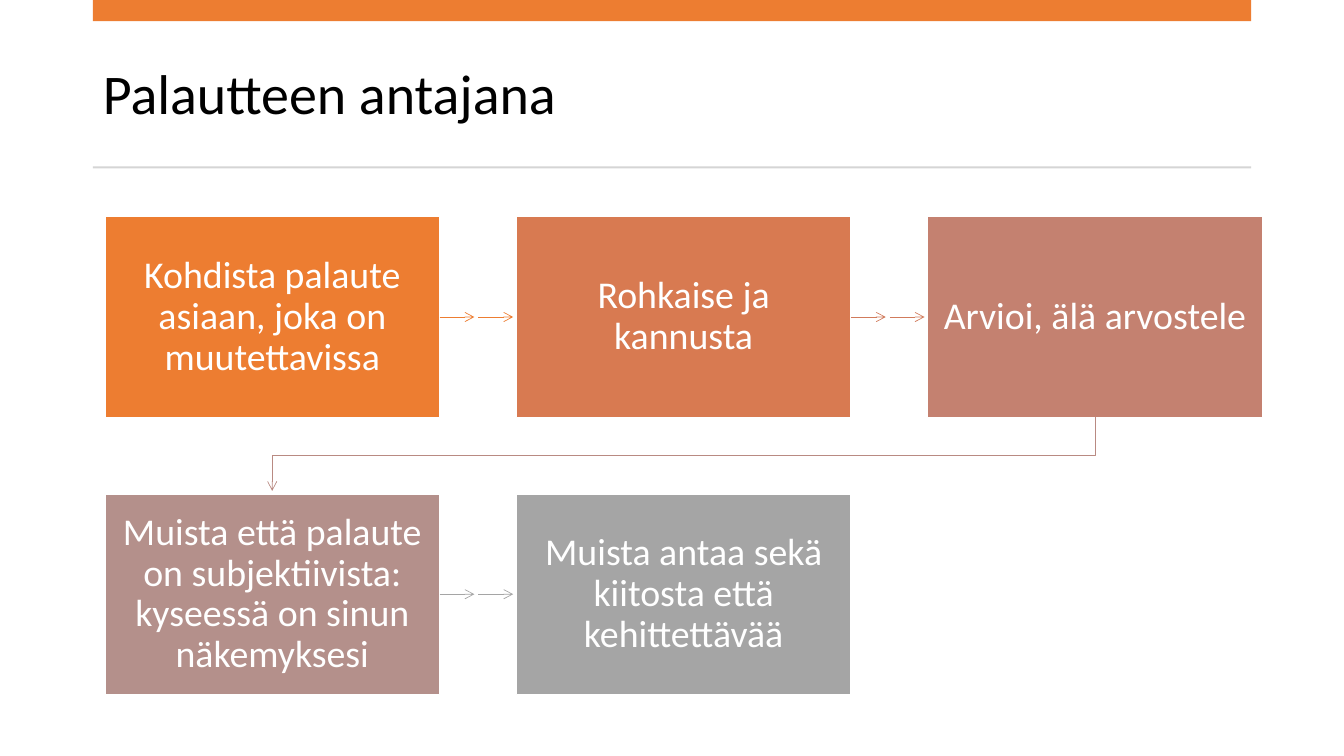
from dataclasses import dataclass

from lxml import etree
from pptx import Presentation
from pptx import util as u
from pptx.dml.color import RGBColor
from pptx.enum import shapes, text
from pptx.oxml import ns

COLORS = {
    "accent": "ED7D31", "rule": "D5D5D5", "white": "FFFFFF", "black": "000000",
    "focus": "ED7D31", "encourage": "D87A51", "assess": "C48170",
    "subjective": "B4908B", "balance": "A5A5A5",
    "encourage_arrow": "D17B5C", "row_arrow": "B98A82",
}
FONT = "Calibri"
GRID_LEFT, GRID_TOP = 1.04, 2.15
COLUMN, ROW = 4.08, 2.75
STEP_WIDTH, STEP_HEIGHT = 3.32, 1.99
BAND_LEFT, BAND_WIDTH = 0.92, 11.49
DASH, DASH_GAP = 0.345, 0.04
ARROW_END_GAP = 0.03


@dataclass(frozen=True)
class Step:
    wording: str
    column: int
    row: int
    color: str

    @property
    def left(self) -> float:
        return GRID_LEFT + self.column * COLUMN

    @property
    def top(self) -> float:
        return GRID_TOP + self.row * ROW

    @property
    def center(self) -> float:
        return self.left + STEP_WIDTH / 2


@dataclass(frozen=True)
class Link:
    source: int
    target: int
    color: str


STEPS = [
    Step("Kohdista palaute asiaan, joka on muutettavissa", 0, 0, "focus"),
    Step("Rohkaise ja kannusta", 1, 0, "encourage"),
    Step("Arvioi, älä arvostele", 2, 0, "assess"),
    Step("Muista että palaute on subjektiivista: kyseessä on sinun näkemyksesi", 0, 1, "subjective"),
    Step("Muista antaa sekä kiitosta että kehittettävää", 1, 1, "balance"),
]
LINKS = [
    Link(0, 1, "accent"),
    Link(1, 2, "encourage_arrow"),
    Link(2, 3, "row_arrow"),
    Link(3, 4, "balance"),
]


def rgb(name: str) -> RGBColor:
    return RGBColor.from_string(COLORS[name])


def write(frame, wording: str, size: float, color: str, align) -> None:
    frame.text = wording
    frame.word_wrap = True
    frame.auto_size = text.MSO_AUTO_SIZE.NONE
    frame.vertical_anchor = text.MSO_ANCHOR.MIDDLE
    paragraph = frame.paragraphs[0]
    paragraph.alignment = align
    paragraph.line_spacing = 0.9
    paragraph.font.name = FONT
    paragraph.font.size = u.Pt(size)
    paragraph.font.color.rgb = rgb(color)


def draw_rect(slide, left: float, top: float, width: float, height: float, color: str):
    rect = slide.shapes.add_shape(
        shapes.MSO_SHAPE.RECTANGLE,
        u.Inches(left), u.Inches(top), u.Inches(width), u.Inches(height))
    rect.shadow.inherit = False
    rect.fill.solid()
    rect.fill.fore_color.rgb = rgb(color)
    rect.line.fill.background()
    return rect


def draw_step(slide, step: Step):
    box = draw_rect(slide, step.left, step.top, STEP_WIDTH, STEP_HEIGHT, step.color)
    box.line.color.rgb = rgb("white")
    box.line.width = u.Pt(1)
    frame = box.text_frame
    frame.margin_left = frame.margin_right = u.Inches(0.16)
    frame.margin_top = frame.margin_bottom = u.Inches(0.17)
    write(frame, step.wording, 27, "white", text.PP_ALIGN.CENTER)
    return box


def style_arrow(arrow, color: str) -> None:
    arrow.line.color.rgb = rgb(color)
    arrow.line.width = u.Pt(0.5)
    etree.SubElement(arrow.get_or_add_ln(), ns.qn("a:tailEnd"), type="arrow")


def draw_dash(slide, start: float, end: float, y: float, color: str):
    dash = slide.shapes.add_connector(
        shapes.MSO_CONNECTOR.STRAIGHT,
        u.Inches(start), u.Inches(y), u.Inches(end), u.Inches(y))
    style_arrow(dash, color)
    etree.SubElement(dash.element.spPr, ns.qn("a:effectLst"))
    return dash


def draw_row_link(slide, source: Step, target: Step, source_box, color: str) -> None:
    y = source.top + STEP_HEIGHT / 2
    start = source.left + STEP_WIDTH
    end = target.left - ARROW_END_GAP
    first = draw_dash(slide, start, start + DASH, y, color)
    first.begin_connect(source_box, 3)
    draw_dash(slide, start + DASH + DASH_GAP, end, y, color)


def draw_return_link(slide, source: Step, target: Step, color: str) -> None:
    bottom = source.top + STEP_HEIGHT
    turn = (bottom + target.top) / 2
    route = [
        (source.center, bottom),
        (source.center, turn),
        (target.center, turn),
        (target.center, target.top - ARROW_END_GAP),
    ]
    points = [(u.Inches(x), u.Inches(y)) for x, y in route]
    builder = slide.shapes.build_freeform(*points[0])
    builder.add_line_segments(points[1:], close=False)
    path_arrow = builder.convert_to_shape()
    path_arrow.shadow.inherit = False
    path_arrow.fill.background()
    style_arrow(path_arrow, color)


def main() -> None:
    deck = Presentation()
    deck.slide_width, deck.slide_height = u.Inches(13.33), u.Inches(7.5)
    slide = deck.slides.add_slide(deck.slide_layouts[5])

    title = slide.shapes.title
    title.left, title.top = u.Inches(BAND_LEFT), u.Inches(0.37)
    title.width, title.height = u.Inches(BAND_WIDTH), u.Inches(1.18)
    write(title.text_frame, "Palautteen antajana", 40, "black", text.PP_ALIGN.LEFT)

    draw_rect(slide, BAND_LEFT, 0, BAND_WIDTH, 0.21, "accent")
    draw_rect(slide, BAND_LEFT, 1.65, BAND_WIDTH, 0.02, "rule")

    boxes = [draw_step(slide, step) for step in STEPS]
    for link in LINKS:
        source, target = STEPS[link.source], STEPS[link.target]
        if source.row == target.row:
            draw_row_link(slide, source, target, boxes[link.source], link.color)
        else:
            draw_return_link(slide, source, target, link.color)

    deck.save("out.pptx")


if __name__ == "__main__":
    main()
